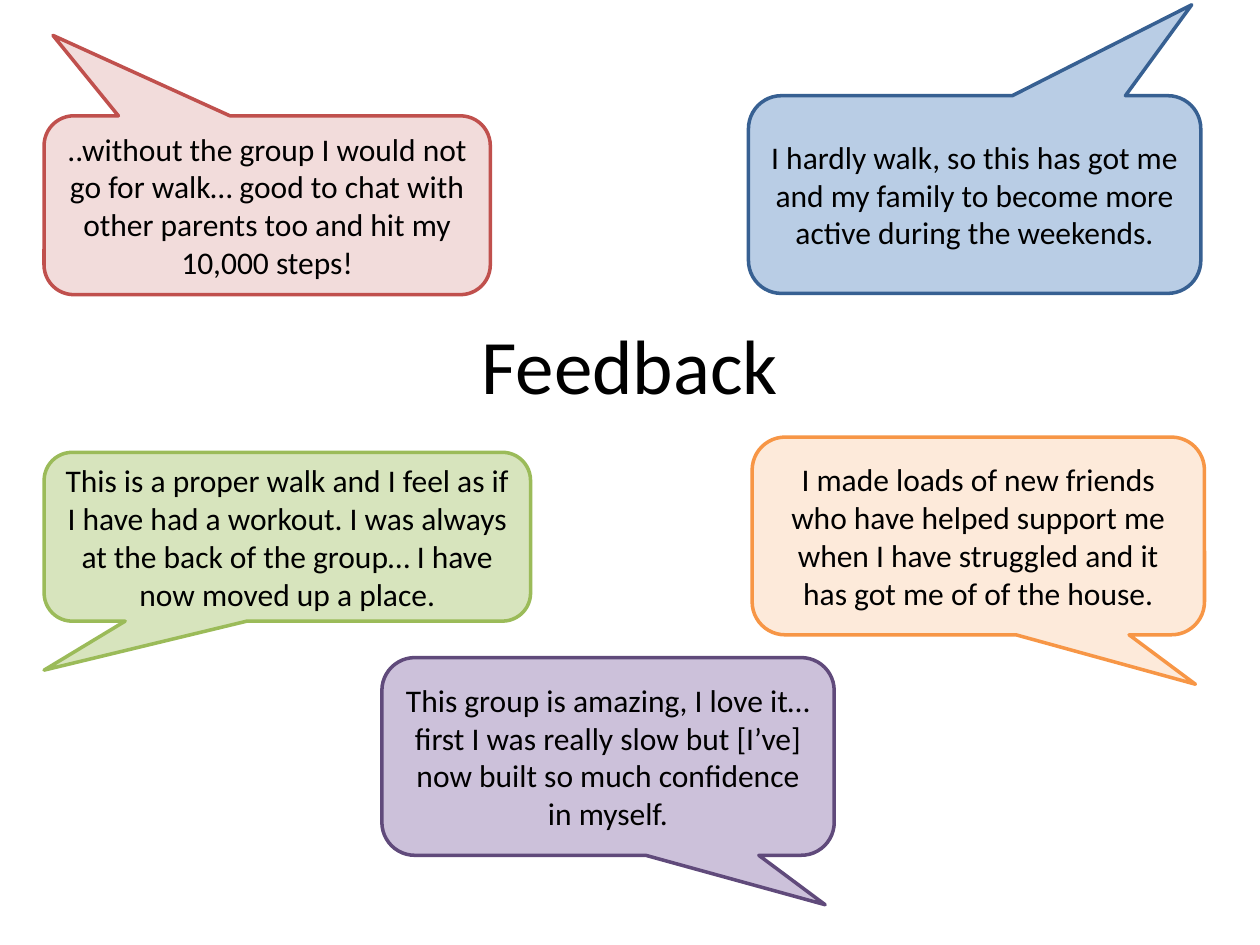
import pptx
import pptx.dml.color
import pptx.enum.shapes
import pptx.enum.text
import pptx.util

Pt = pptx.util.Pt
RGBColor = pptx.dml.color.RGBColor

FONT = "Calibri"
BLACK = RGBColor(0x00, 0x00, 0x00)
PINK, RED = RGBColor(0xF2, 0xDC, 0xDB), RGBColor(0xC0, 0x50, 0x4D)
PALE_BLUE, BLUE = RGBColor(0xB9, 0xCD, 0xE5), RGBColor(0x37, 0x60, 0x92)
PALE_GREEN, GREEN = RGBColor(0xD7, 0xE4, 0xBD), RGBColor(0x9B, 0xBB, 0x59)
PEACH, ORANGE = RGBColor(0xFD, 0xEA, 0xDA), RGBColor(0xF7, 0x96, 0x46)
LILAC, PURPLE = RGBColor(0xCC, 0xC1, 0xDA), RGBColor(0x60, 0x4A, 0x7B)

# Box (left, top, width, height in points), tail tip from the centre
# (fractions of width and height), fill, outline, words
QUOTES = [
    ((25.2, 66.2, 255, 102.2), (-0.48, -0.95), PINK, RED,
     "..without the group I would not go for walk… good to chat with "
     "other parents too and hit my 10,000 steps!"),
    ((427.7, 54.7, 258.5, 113), (0.48, -0.96), PALE_BLUE, BLUE,
     "I hardly walk, so this has got me and my family to become more "
     "active during the weekends."),
    ((25.2, 258.5, 278, 96.5), (-0.5, 0.79), PALE_GREEN, GREEN,
     "This is a proper walk and I feel as if I have had a workout. I was "
     "always at the back of the group… I have now moved up a place."),
    ((429.8, 249.8, 258.5, 113), (0.48, 0.75), PEACH, ORANGE,
     "I made loads of new friends who have helped support me when I have "
     "struggled and it has got me of of the house."),
    ((218.2, 375.8, 258.5, 113), (0.48, 0.75), LILAC, PURPLE,
     "This group is amazing, I love it… first I was really slow but "
     "[I’ve] now built so much confidence in myself."),
]


def write_centred(shape, words, size):
    frame = shape.text_frame
    frame.word_wrap = True
    frame.vertical_anchor = pptx.enum.text.MSO_ANCHOR.MIDDLE
    para = frame.paragraphs[0]
    para.text = words
    para.alignment = pptx.enum.text.PP_ALIGN.CENTER
    para.font.name = FONT
    para.font.size = Pt(size)
    para.font.color.rgb = BLACK


def place_title(page, box, words):
    title = page.shapes.title
    title.left, title.top, title.width, title.height = map(Pt, box)
    write_centred(title, words, 44)


def add_quote(page, box, tail, fill, outline, words):
    bubble = page.shapes.add_shape(
        pptx.enum.shapes.MSO_SHAPE.ROUNDED_RECTANGULAR_CALLOUT, *map(Pt, box))
    bubble.adjustments[0], bubble.adjustments[1] = tail
    bubble.shadow.inherit = False
    bubble.fill.solid()
    bubble.fill.fore_color.rgb = fill
    bubble.line.color.rgb = outline
    bubble.line.width = Pt(2)
    write_centred(bubble, words, 18)


def main():
    deck = pptx.Presentation()
    deck.slide_width, deck.slide_height = Pt(720), Pt(540)
    page = deck.slides.add_slide(deck.slide_layouts.get_by_name("Title Only"))
    place_title(page, (36, 162.75, 648, 90), "Feedback")
    for quote in QUOTES:
        add_quote(page, *quote)
    deck.save("out.pptx")


if __name__ == "__main__":
    main()
